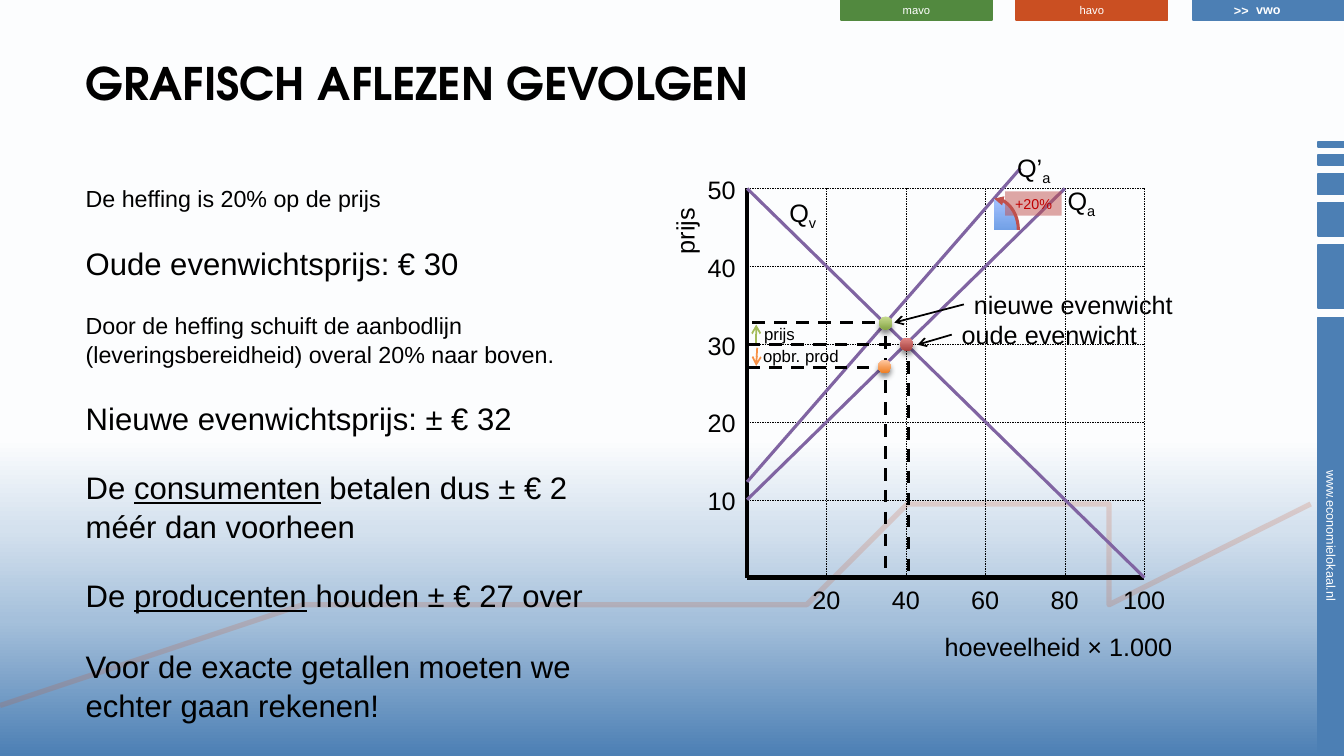
from lxml import etree
from pptx import Presentation
from pptx.dml.color import RGBColor
from pptx.enum.dml import MSO_LINE_DASH_STYLE as Dash
from pptx.enum.shapes import MSO_CONNECTOR as Link, MSO_SHAPE as Shape
from pptx.enum.text import MSO_ANCHOR as Anchor, MSO_AUTO_SIZE as AutoSize, PP_ALIGN as Align
from pptx.oxml.ns import qn
from pptx.util import Inches, Pt

BLUE, RED, PURPLE = "4C7FB4", "C0504D", "8064A2"
SKY = [(0, BLUE), (18, "A5C0DB"), (30, "D4E1EE"), (42, "FCFDFE"), (50, "FFFFFF")]
TABS = [("mavo", 8.34, "52893F", 8, False), ("havo", 10.08, "CA4F22", 8, False),
        ("vwo", 11.83, BLUE, 9, True)]
SIDE_BARS = [(1.41, 0.05, ""), (1.54, 0.1, ""), (1.73, 0.2, ""), (2.01, 0.33, ""),
             (2.43, 0.63, ""), (3.15, 4.33, "www.economielokaal.nl")]
BAR_WIDTH, BAR_MIDDLE = 0.26, 13.2
TREND = [(12.97, 4.62), (11.12, 5.51), (10.71, 5.37), (9.28, 5.49), (8.49, 5.66), (7.85, 5.57),
         (5.97, 5.68), (5.01, 6.03), (3.57, 6.15), (2.7, 6.38), (0.03, 7.13)]

TITLE = "GRAFISCH AFLEZEN GEVOLGEN"
# size, space before, (text, underlined) pieces
BODY = [
    (16.6, 0, [("De heffing is 20% op de prijs", False)]),
    (22.2, 21.6, [("Oude evenwichtsprijs: € 30", False)]),
    (16.6, 20.4, [("Door de heffing schuift de aanbodlijn (leveringsbereidheid) "
                   "overal 20% naar boven.", False)]),
    (22.2, 21.6, [("Nieuwe evenwichtsprijs: ± € 32", False)]),
    (22.2, 21.6, [("De ", False), ("consumenten", True),
                  (" betalen dus ± € 2 méér dan voorheen", False)]),
    (22.2, 21.6, [("De ", False), ("producenten", True), (" houden ± € 27 over", False)]),
    (22.2, 22.9, [("Voor de exacte getallen moeten we echter gaan rekenen!", False)]),
]

# Graph: quantity 0-100 and price 0-50
LEFT, TOP, RIGHT, BOTTOM = 7.41, 1.87, 11.35, 5.73
QUANTITIES, PRICES = range(20, 101, 20), range(10, 51, 10)
# (quantity, price) at both ends
CURVES = [((0, 50), (100, 0)), ((0, 10), (80, 50)), ((0, 12.3), (68.8, 52.6))]
READINGS = [((0, 30), (40, 30)), ((1.3, 32.8), (34, 32.8)), ((40.6, 27.8), (40.6, 0)),
            ((34.8, 31), (34.8, 0)), ((0, 27), (34.5, 27))]
CURVE_NAMES = [("Q", "v", 7.73, 1.91, 0.48), ("Q", "a", 10.49, 1.79, 0.49),
               ("Q’", "a", 9.99, 1.46, 0.55)]
CALLOUTS = [("oude evenwicht", 9.44, 3.12, 1.96, (9.1, 3.42)),
            ("nieuwe evenwicht", 9.56, 2.82, 2.19, (8.87, 3.2))]
SHARES = [("prijs", 7.48, 3.16, 0.51, (7.5, 3.4), (7.5, 3.22), "A3BB59"),
          ("opbr. prod", 7.47, 3.38, 0.96, (7.51, 3.45), (7.5, 3.63), "F79146")]
POINTS = [(8.93, 3.35, "E18785", "A7423F"), (8.72, 3.14, "C9DD90", "86A547"),
          (8.71, 3.57, "FFC9A4", "EE7E22")]
DOT = 0.13


def rgb(code):
    return RGBColor.from_string(code)


def add_xml(parent, tag, **attributes):
    return etree.SubElement(parent, qn(tag), **attributes)


def set_gradient(fill, element, stops, angle):
    fill.gradient()
    fill.gradient_angle = angle
    stop_list = next(element.iter(qn("a:gsLst")))
    for old in list(stop_list):
        stop_list.remove(old)
    for position, code in stops:
        stop = add_xml(stop_list, "a:gs", pos=str(position * 1000))
        add_xml(stop, "a:srgbClr", val=code)


def set_alpha(fill_parent, percent):
    color = next(fill_parent.iter(qn("a:srgbClr")))
    add_xml(color, "a:alpha", val=str(percent * 1000))


def style(span, size, color="000000", bold=False, font="Arial"):
    span.font.name, span.font.size, span.font.bold = font, Pt(size), bold
    span.font.color.rgb = rgb(color)


def add_shape(kind, left, top, width, height):
    shape = page.shapes.add_shape(kind, Inches(left), Inches(top), Inches(width), Inches(height))
    shape.shadow.inherit = False
    return shape


def add_bar(text, left, top, width, height, color, size, bold=False):
    bar = add_shape(Shape.RECTANGLE, left, top, width, height)
    bar.fill.solid()
    bar.fill.fore_color.rgb = bar.line.color.rgb = rgb(color)
    bar.line.width = Pt(1.25)
    if text:
        frame = bar.text_frame
        frame.text = text
        frame.margin_top, frame.margin_bottom = 0, Inches(0.01)
        frame.vertical_anchor = Anchor.MIDDLE
        frame.paragraphs[0].alignment = Align.CENTER
        style(frame.paragraphs[0].runs[0], size, "FFFFFF", bold)
    return bar


def add_label(text, left, top, width, size=18, height=0.4, sub="", color="000000", bold=False):
    box = page.shapes.add_textbox(Inches(left), Inches(top), Inches(width), Inches(height))
    frame = box.text_frame
    frame.word_wrap, frame.auto_size = False, AutoSize.SHAPE_TO_FIT_TEXT
    frame.text = text
    para = frame.paragraphs[0]
    if sub:
        para.add_run().text = sub
    for span in para.runs:
        style(span, size, color, bold)
    if sub:
        list(box.element.iter(qn("a:rPr")))[-1].set("baseline", "-25000")
    return box


def add_line(start, end, width, color="000000", dashed=False, arrow=False):
    line = page.shapes.add_connector(Link.STRAIGHT, *map(Inches, start + end))
    line.line.color.rgb, line.line.width = rgb(color), Pt(width)
    if dashed:
        line.line.dash_style = Dash.DASH
    if arrow:
        add_xml(next(line.element.iter(qn("a:ln"))), "a:tailEnd", type="arrow")
    add_xml(line.element.spPr, "a:effectLst")
    return line


def spot(quantity, price):
    """Place of a quantity and price on the page."""
    return (LEFT + quantity / 100 * (RIGHT - LEFT), BOTTOM - price / 50 * (BOTTOM - TOP))


deck = Presentation()
deck.slide_width, deck.slide_height = Inches(13.33), Inches(7.5)
page = deck.slides.add_slide(deck.slide_layouts[1])
set_gradient(page.background.fill, page.element, SKY, 90)

# Frame of the page
for top, length, text in SIDE_BARS:
    bar = add_bar(text, BAR_MIDDLE - length / 2, top + (length - BAR_WIDTH) / 2,
                  length, BAR_WIDTH, BLUE, 9)
    bar.rotation = 90
for text, left, color, size, bold in TABS:
    add_bar(text, left, 0, 1.5, 0.2, color, size, bold)
builder = page.shapes.build_freeform(*TREND[0], scale=Inches(1))
builder.add_line_segments(TREND[1:], close=False)
trend = builder.convert_to_shape()
trend.shadow.inherit = False
trend.fill.background()
trend.line.color.rgb, trend.line.width = rgb("CA4F22"), Pt(3.75)
set_alpha(next(trend.element.iter(qn("a:ln"))), 19)
add_label(">>", 12.14, -0.02, 0.35, 9, 0.25, color="FFFFFF", bold=True)

# Title and body, in front of the frame
title, body = page.shapes.title, page.placeholders[1]
for holder, place in ((title, (0.75, 0.5, 10.02, 0.89)), (body, (0.75, 1.77, 5.4, 5.15))):
    holder.left, holder.top, holder.width, holder.height = map(Inches, place)
    holder.text_frame.vertical_anchor = Anchor.TOP
    holder.text_frame.auto_size = AutoSize.NONE
    page.shapes.element.append(holder.element)
title.text_frame.text = TITLE
title.text_frame.paragraphs[0].alignment = Align.LEFT
style(title.text_frame.paragraphs[0].runs[0], 32, bold=True, font="TeX Gyre Adventor")
body.text_frame.text = "\n".join("" for _ in BODY)
for para, (size, before, pieces) in zip(body.text_frame.paragraphs, BODY):
    para.space_before, para.space_after, para.line_spacing = Pt(before), Pt(0), 1.04
    for text, underlined in pieces:
        span = para.add_run()
        span.text = text
        style(span, size)
        span.font.underline = underlined
for para_element in body.element.iter(qn("a:p")):
    settings = para_element.get_or_add_pPr()
    settings.set("marL", "0")
    settings.set("indent", "0")
    add_xml(settings, "a:buNone")

# Axes and grid
add_line(spot(0, 50), spot(0, 0), 3)
add_line(spot(100, 0), spot(0, 0), 3)
for price in PRICES:
    add_line(spot(0, price), spot(100, price), 0.25, dashed=True)
    add_label(str(price), 6.92, spot(0, price)[1] - 0.19, 0.48)
for quantity in QUANTITIES:
    add_line(spot(quantity, 50), spot(quantity, 0), 0.25, dashed=True)
    width = 0.62 if quantity == 100 else 0.48
    add_label(str(quantity), spot(quantity, 0)[0] - width / 2, 5.75, width)
add_label("hoeveelheid × 1.000", 9.27, 6.21, 2.48)
add_label("prijs", 6.46, 2.09, 0.66).rotation = 270

# Curves, readings and their labels
for start, end in CURVES:
    add_line(spot(*start), spot(*end), 2.25, PURPLE)
for start, end in READINGS:
    add_line(spot(*start), spot(*end), 2.25, dashed=True)
for name, sub, left, top, width in CURVE_NAMES:
    add_label(name, left, top, width, sub=sub)
for text, left, top, width, target in CALLOUTS:
    box = add_label(text, left, top, width)
    add_line((left, top + 0.2), target, 1.25, arrow=True).begin_connect(box, 1)
for text, left, top, width, start, end, color in SHARES:
    add_line(start, end, 1.25, color, arrow=True)
    add_label(text, left, top, width, 12, 0.3)
for left, top, light, dark in POINTS:
    dot = add_shape(Shape.OVAL, left, top, DOT, DOT)
    set_gradient(dot.fill, dot.element, [(0, light), (100, dark)], 270)
    dot.line.fill.background()
    shadow = add_xml(next(dot.element.iter(qn("a:effectLst"))), "a:outerShdw",
                     blurRad=str(Pt(4)), dist=str(Pt(3)), dir="5400000", rotWithShape="0")
    add_xml(add_xml(shadow, "a:srgbClr", val="000000"), "a:alpha", val="46000")

# Shift of the supply curve
arc = add_shape(Shape.ARC, 9.62, 1.97, 0.48, 0.62)
arc.line.color.rgb, arc.line.width = rgb(RED), Pt(2.25)
add_xml(next(arc.element.iter(qn("a:ln"))), "a:headEnd", type="triangle")
rise = add_shape(Shape.RECTANGLE, 9.97, 1.9, 0.56, 0.24)
rise.fill.solid()
rise.fill.fore_color.rgb = rgb(RED)
set_alpha(rise.element.spPr, 50)
rise.line.fill.background()
rise.text_frame.text = "+20%"
rise.text_frame.word_wrap = False
rise.text_frame.paragraphs[0].alignment = Align.LEFT
style(rise.text_frame.paragraphs[0].runs[0], 10.2, "C00000")

deck.save("out.pptx")
